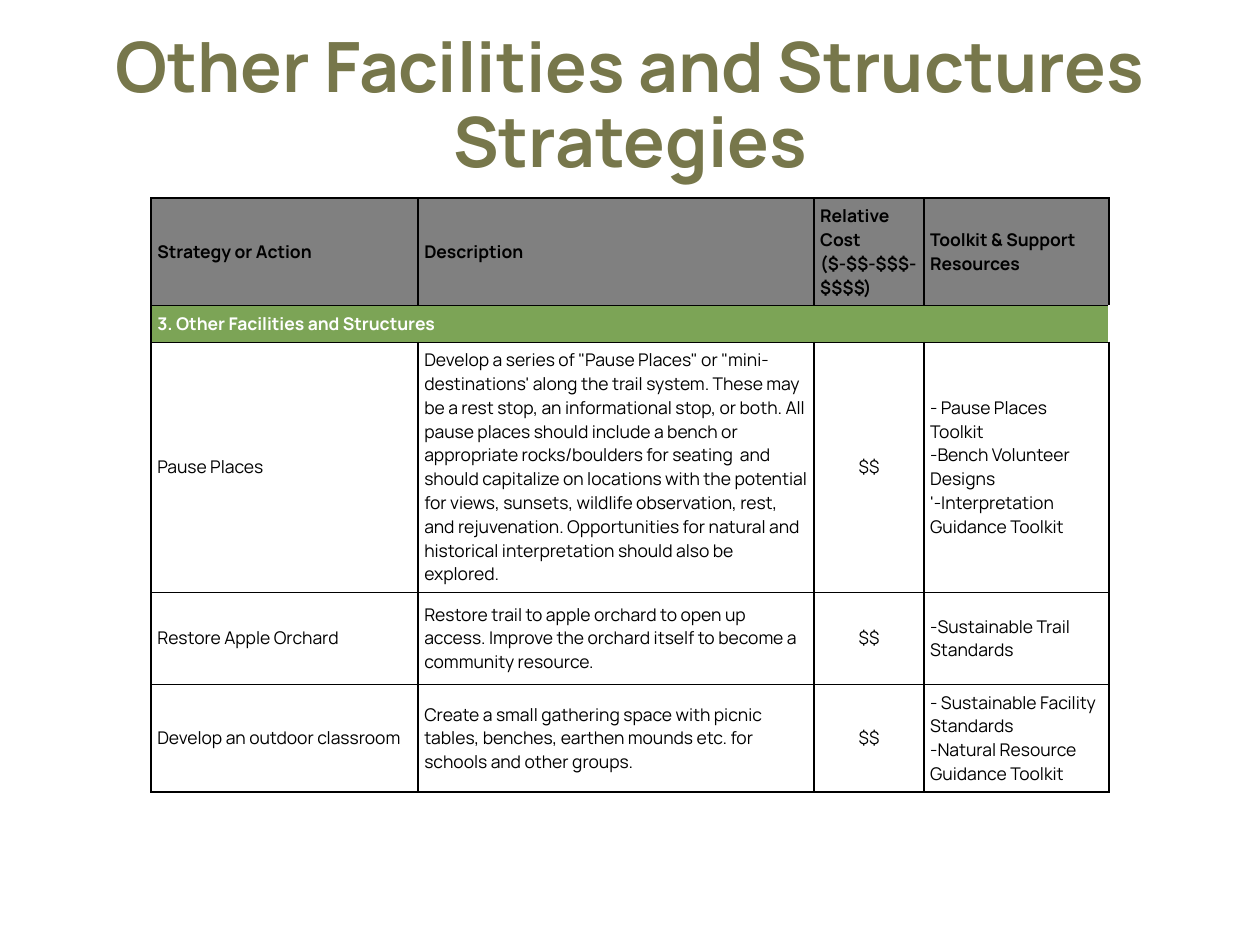
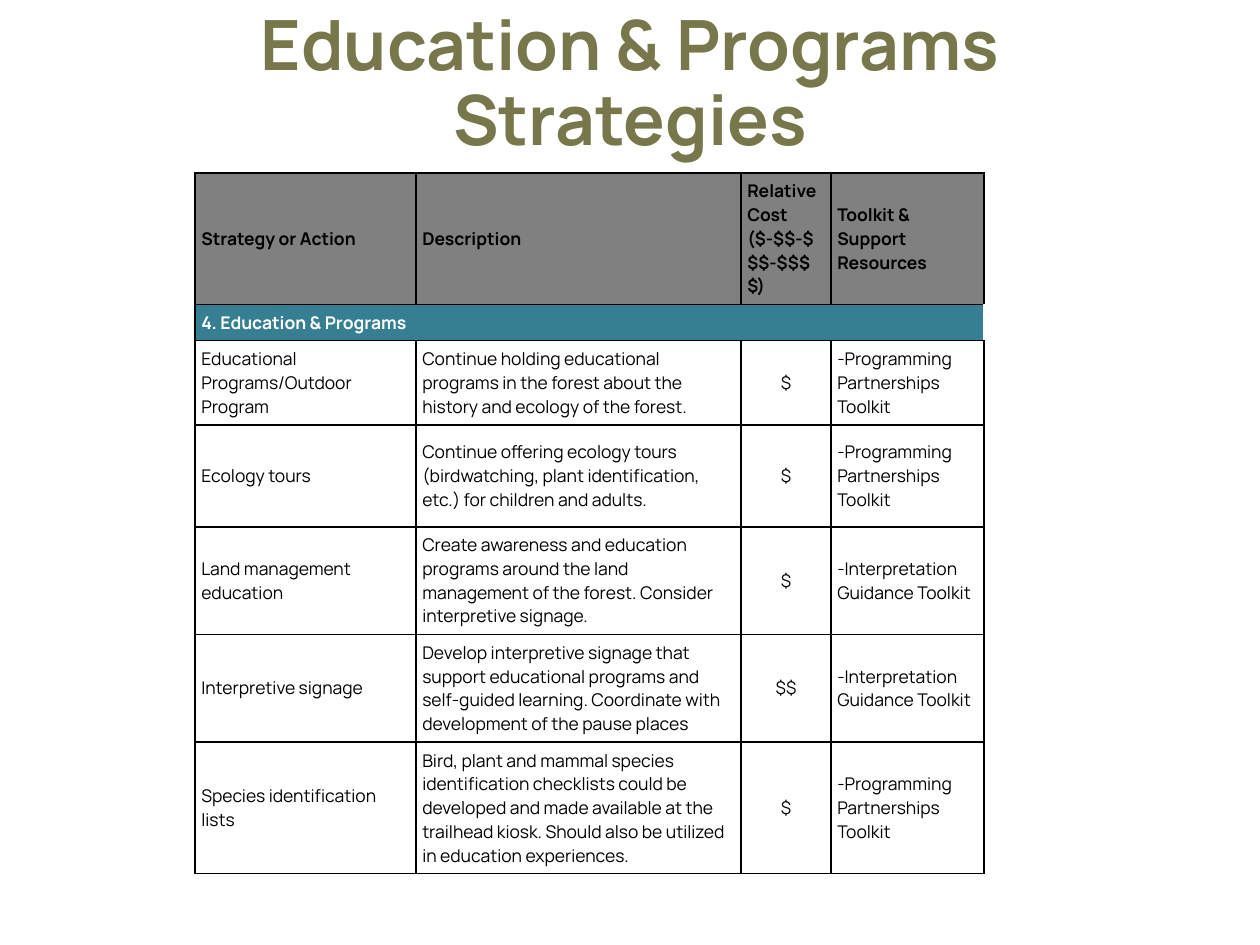
from lxml import etree
from pptx import Presentation
from pptx.dml.color import RGBColor
from pptx.enum.text import MSO_ANCHOR, MSO_AUTO_SIZE, PP_ALIGN
from pptx.oxml.ns import qn
from pptx.util import Emu, Pt

MIDDLE = MSO_ANCHOR.MIDDLE
NO_AUTOFIT = MSO_AUTO_SIZE.NONE
LEFT, CENTER = PP_ALIGN.LEFT, PP_ALIGN.CENTER

PX_PER_INCH = 126
FONT = "Manrope"
COLORS = {
    "title": "77774B",
    "header": "808080",
    "facilities": "7CA456",
    "education": "367E92",
    "black": "000000",
    "white": "FFFFFF",
}
TITLE_LAYOUT = 5
CELL_MARGIN = Pt(3.6)
COST_COLUMN = 2
THIN, THICK = 0.5, 1
FULL_BORDER = {"L": THICK, "R": THICK, "T": THICK, "B": THICK}
FIRST_BODY_BORDER = {**FULL_BORDER, "T": THIN}
SECTION_BORDER = {"T": THICK, "B": THIN}

HEADERS = [
    "Strategy or Action",
    "Description",
    "Relative Cost \n($-$$-$$$-$$$$)",
    "Toolkit & Support Resources",
]
PARTNERSHIPS = "-Programming Partnerships Toolkit"
INTERPRETATION = "-Interpretation Guidance Toolkit"

FACILITIES = [
    ["Pause Places",
     "Develop a series of \"Pause Places\" or \"mini-destinations' along the trail system. "
     "These may be a rest stop, an informational stop, or both. All pause places should "
     "include a bench or appropriate rocks/boulders for seating  and should capitalize on "
     "locations with the potential for views, sunsets, wildlife observation, rest, and "
     "rejuvenation. Opportunities for natural and historical interpretation should also "
     "be explored.",
     "$$",
     "- Pause Places Toolkit\n-Bench Volunteer Designs\n'" + INTERPRETATION],
    ["Restore Apple Orchard",
     "Restore trail to apple orchard to open up access. Improve the orchard itself to "
     "become a community resource.",
     "$$",
     "-Sustainable Trail Standards"],
    ["Develop an outdoor classroom",
     "Create a small gathering space with picnic tables, benches, earthen mounds etc. "
     "for schools and other groups.",
     "$$",
     "- Sustainable Facility Standards\n-Natural Resource Guidance Toolkit"],
]

EDUCATION = [
    ["Educational Programs/Outdoor Program",
     "Continue holding educational programs in the forest about the history and ecology "
     "of the forest.",
     "$", PARTNERSHIPS],
    ["Ecology tours",
     "Continue offering ecology tours (birdwatching, plant identification, etc.) for "
     "children and adults.",
     "$", PARTNERSHIPS],
    ["Land management education",
     "Create awareness and education programs around the land management of the forest. "
     "Consider interpretive signage.",
     "$", INTERPRETATION],
    ["Interpretive signage",
     "Develop interpretive signage that support educational programs and self-guided "
     "learning. Coordinate with development of the pause places",
     "$$", INTERPRETATION],
    ["Species identification lists",
     "Bird, plant and mammal species identification checklists could be developed and "
     "made available at the trailhead kiosk. Should also be utilized in education "
     "experiences.",
     "$", PARTNERSHIPS],
]


def px(length):
    return Emu(round(length * 914400 / PX_PER_INCH))


def color(name):
    return RGBColor.from_string(COLORS[name])


def write(frame, text, size, color_name, bold, align):
    paragraph = frame.paragraphs[0]
    paragraph.text = text
    paragraph.alignment = align
    font = paragraph.font
    font.name = FONT
    font.size = Pt(size)
    font.bold = bold
    font.color.rgb = color(color_name)
    return paragraph


def add_title(page, text, top):
    title = page.shapes.title
    title.left, title.top, title.width, title.height = map(px, (87, top, 1086, 139))
    frame = title.text_frame
    frame.word_wrap = True
    frame.auto_size = NO_AUTOFIT
    frame.vertical_anchor = MIDDLE
    write(frame, text, 39.6, "title", True, CENTER).line_spacing = 0.9


def set_borders(cell, widths):
    properties = cell._tc.get_or_add_tcPr()
    for side in "LRTB":
        if side in widths:
            line = etree.SubElement(properties, qn(f"a:ln{side}"), w=str(Pt(widths[side])))
            fill = etree.SubElement(line, qn("a:solidFill"))
            etree.SubElement(fill, qn("a:srgbClr"), val=COLORS["black"])


def style_cell(cell, fill_name, borders):
    cell.margin_left = cell.margin_right = CELL_MARGIN
    cell.margin_top = cell.margin_bottom = CELL_MARGIN
    cell.vertical_anchor = MIDDLE
    set_borders(cell, borders)
    cell.fill.solid()
    cell.fill.fore_color.rgb = color(fill_name)


def fill_row(table, row, texts, fill_name, bold, borders):
    for column, text in enumerate(texts):
        cell = table.cell(row, column)
        style_cell(cell, fill_name, borders)
        align = CENTER if column == COST_COLUMN and not bold else LEFT
        write(cell.text_frame, text, 10, "black", bold, align)


def fill_section(table, row, text, fill_name):
    last = len(table.columns) - 1
    for column in range(last + 1):
        borders = SECTION_BORDER if column else {"L": THICK, **SECTION_BORDER}
        style_cell(table.cell(row, column), fill_name, borders)
    heading = table.cell(row, 0)
    heading.merge(table.cell(row, last))
    write(heading.text_frame, text, 10, "white", True, LEFT)


def add_strategy_table(page, left, top, widths, heights, section, section_fill, strategies):
    frame = page.shapes.add_table(len(heights), len(widths), px(left), px(top),
                                  px(sum(widths)), px(sum(heights)))
    table = frame.table
    table.first_row = table.horz_banding = False
    for column, width in zip(table.columns, widths):
        column.width = px(width)
    for row, height in zip(table.rows, heights):
        row.height = px(height)
    fill_row(table, 0, HEADERS, "header", True, FULL_BORDER)
    fill_section(table, 1, section, section_fill)
    for row, texts in enumerate(strategies, start=2):
        borders = FIRST_BODY_BORDER if row == 2 else FULL_BORDER
        fill_row(table, row, texts, "white", False, borders)


def add_page(deck, title, title_top, **table):
    page = deck.slides.add_slide(deck.slide_layouts[TITLE_LAYOUT])
    add_title(page, title, title_top)
    add_strategy_table(page, **table)


def main():
    deck = Presentation()
    deck.slide_width, deck.slide_height = px(1260), px(945)
    add_page(deck, "Other Facilities and Structures Strategies", 38,
             left=151, top=198, widths=[267, 396, 110, 185],
             heights=[53, 32, 237, 92, 82],
             section="3. Other Facilities and Structures",
             section_fill="facilities", strategies=FACILITIES)
    add_page(deck, "Education & Programs Strategies", 16,
             left=195, top=173, widths=[221, 325, 90, 153],
             heights=[59, 36, 67, 102, 100, 83, 100],
             section="4. Education & Programs",
             section_fill="education", strategies=EDUCATION)
    deck.save("out.pptx")


if __name__ == "__main__":
    main()
